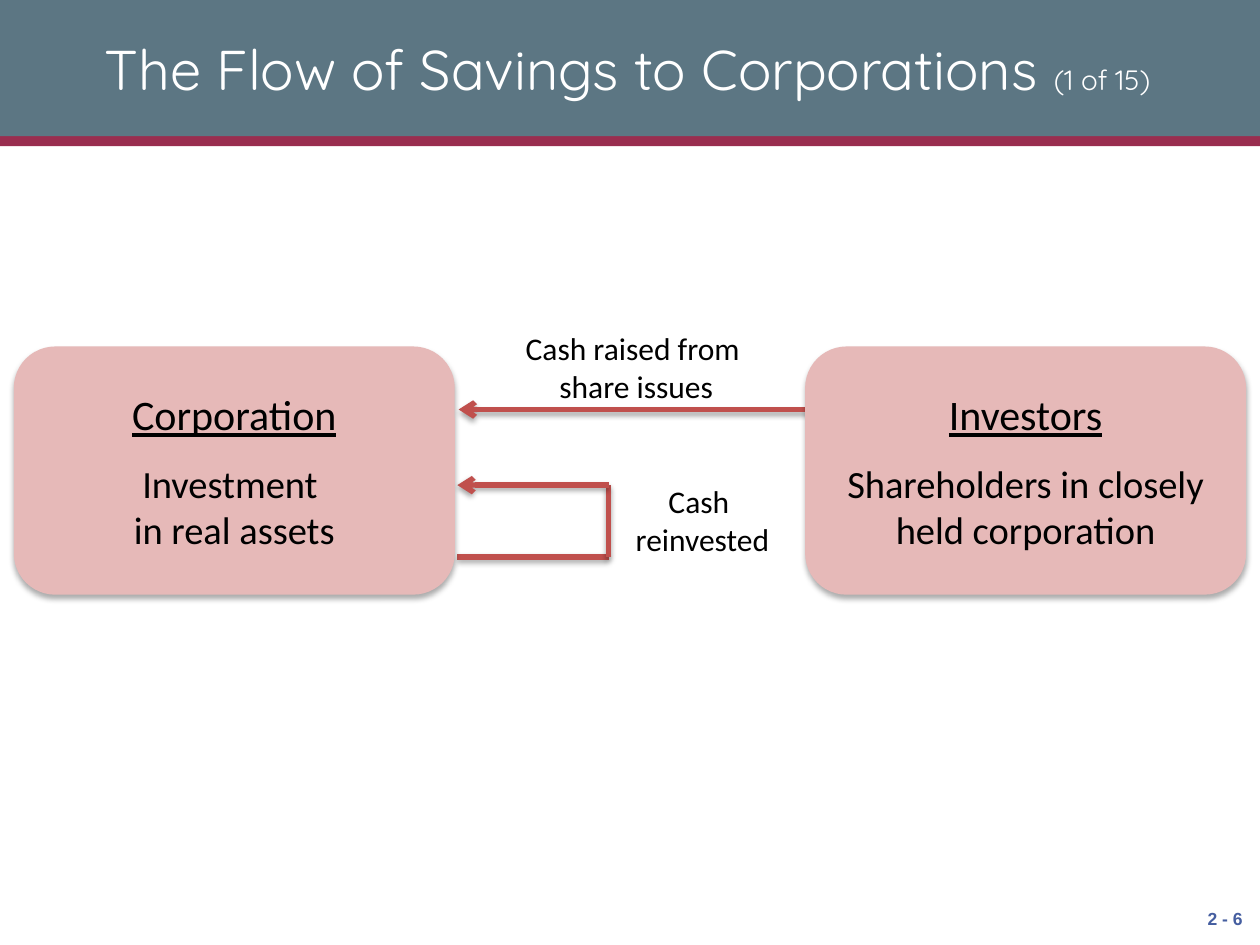
import pptx
import pptx.dml.color
import pptx.enum.shapes
import pptx.enum.text
import pptx.oxml
import pptx.oxml.ns
import pptx.util

Inches = pptx.util.Inches
Pt = pptx.util.Pt
RGBColor = pptx.dml.color.RGBColor
SHAPE = pptx.enum.shapes.MSO_SHAPE
ALIGN = pptx.enum.text.PP_ALIGN
MIDDLE = pptx.enum.text.MSO_ANCHOR.MIDDLE

SLATE = RGBColor(0x5C, 0x76, 0x83)
MAROON = RGBColor(0x99, 0x2D, 0x4F)
PINK = RGBColor(0xE6, 0xB9, 0xB8)
RED = RGBColor(0xC0, 0x50, 0x4D)
BLUE = RGBColor(0x45, 0x5E, 0xA0)
BLACK = RGBColor(0, 0, 0)
WHITE = RGBColor(255, 255, 255)


def style(font, size, color, name="Calibri"):
    font.size, font.name = Pt(size), name
    font.color.rgb = color


def add_shadow(sp, alpha, blur, dist):
    """Give a shape or connector a soft black shadow straight below it."""
    sp._element.spPr.append(pptx.oxml.parse_xml(
        f'<a:effectLst {pptx.oxml.ns.nsdecls("a")}>'
        f'<a:outerShdw blurRad="{Pt(blur)}" dist="{Pt(dist)}" dir="5400000" rotWithShape="0">'
        f'<a:srgbClr val="000000"><a:alpha val="{alpha * 1000}"/></a:srgbClr>'
        '</a:outerShdw></a:effectLst>'))


def add_band(s, top, height, color):
    """Full-width header band, placed behind the title."""
    sp = s.shapes.add_shape(SHAPE.RECTANGLE, 0, Inches(top), Inches(10), Inches(height))
    sp.shadow.inherit = False
    sp.fill.solid()
    sp.fill.fore_color.rgb = color
    sp.line.fill.background()
    s.shapes._spTree.insert(2, sp._element)


def add_title(s, text, counter):
    sp = s.shapes.title
    sp.left, sp.top, sp.width, sp.height = map(Inches, (0.25, 0.08, 9.46, 0.92))
    tf = sp.text_frame
    tf.vertical_anchor = MIDDLE
    p = tf.paragraphs[0]
    p.alignment = ALIGN.CENTER
    for words, size in ((text, 32), (counter, 16)):
        r = p.add_run()
        r.text = words
        style(r.font, size, WHITE, "Quicksand")


def add_label(s, left, top, width, height, text):
    sp = s.shapes.add_textbox(*map(Inches, (left, top, width, height)))
    tf = sp.text_frame
    tf.word_wrap = False
    tf.text = text
    for p in tf.paragraphs:
        p.alignment = ALIGN.CENTER
        style(p.font, 18, BLACK)
    return tf


def add_party(s, left, heading, lines):
    """Rounded box with an underlined heading over its description."""
    sp = s.shapes.add_shape(SHAPE.ROUNDED_RECTANGLE, Inches(left), Inches(2.75),
                            Inches(3.5), Inches(1.97))
    sp.fill.solid()
    sp.fill.fore_color.rgb = PINK
    sp.line.fill.background()
    add_shadow(sp, 32, 3.5, 2.2)
    tf = sp.text_frame
    tf.word_wrap = True
    tf.vertical_anchor = MIDDLE
    tf.text = "\n".join([heading, *lines])
    for i, p in enumerate(tf.paragraphs):
        p.alignment = ALIGN.CENTER
        style(p.font, 22 if i else 24, BLACK)
        p.font.underline = i == 0
    tf.paragraphs[1].space_before = Pt(12)


def add_flow(s, start, end, arrow=False):
    sp = s.shapes.add_connector(pptx.enum.shapes.MSO_CONNECTOR.STRAIGHT,
                                *map(Inches, (*start, *end)))
    sp.line.color.rgb = RED
    sp.line.width = Pt(3)
    if arrow:
        sp.line._get_or_add_ln().append(pptx.oxml.parse_xml(
            f'<a:tailEnd {pptx.oxml.ns.nsdecls("a")} type="arrow"/>'))
    add_shadow(sp, 35, 3.1, 1.8)


def main():
    prs = pptx.Presentation()
    prs.slide_width, prs.slide_height = Inches(10), Inches(7.5)
    s = prs.slides.add_slide(prs.slide_layouts[5])

    # Header
    add_band(s, 0, 1.08, SLATE)
    add_band(s, 1.08, 0.08, MAROON)
    add_title(s, "The Flow of Savings to Corporations ", "(1 of 15)")

    # Share issue arrow and the reinvestment loop
    add_flow(s, (6.44, 3.25), (3.64, 3.25), arrow=True)
    left, right, top, bottom = 3.63, 4.83, 3.85, 4.42
    add_flow(s, (left, bottom), (right, bottom))
    add_flow(s, (right, top), (right, bottom))
    add_flow(s, (right, top), (left, top), arrow=True)
    add_label(s, 4.06, 2.56, 1.98, 1.01, "Cash raised from \nshare issues")
    add_label(s, 4.94, 3.78, 1.27, 0.71, "Cash \nreinvested")

    # Parties
    add_party(s, 0.11, "Corporation", ["Investment ", "in real assets"])
    add_party(s, 6.39, "Investors", ["Shareholders in closely held corporation"])

    # Page number
    tf = add_label(s, 9.46, 7.08, 0.5, 0.42, "2 - 6")
    tf.vertical_anchor = MIDDLE
    p = tf.paragraphs[0]
    p.alignment = ALIGN.RIGHT
    style(p.font, 10, BLUE, "Arial")
    p.font.bold = True

    prs.save("out.pptx")


if __name__ == "__main__":
    main()
